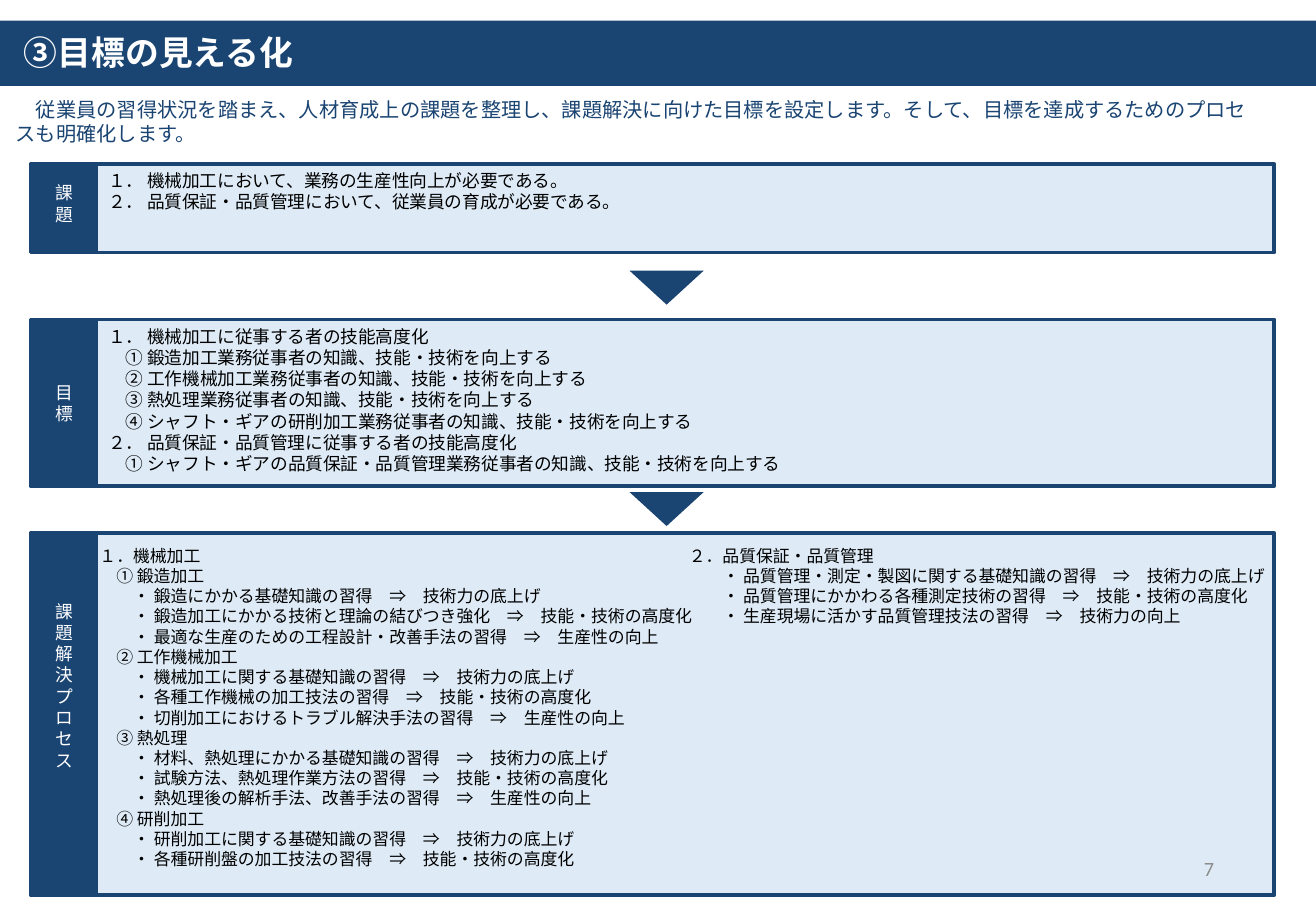
from dataclasses import dataclass

from lxml import etree
from pptx import Presentation
from pptx.dml.color import RGBColor
from pptx.enum.shapes import MSO_SHAPE
from pptx.enum.text import MSO_ANCHOR, PP_ALIGN
from pptx.oxml.ns import qn
from pptx.util import Cm, Pt

RECTANGLE, TRIANGLE = MSO_SHAPE.RECTANGLE, MSO_SHAPE.ISOSCELES_TRIANGLE
TOP, MIDDLE = MSO_ANCHOR.TOP, MSO_ANCHOR.MIDDLE
LEFT, CENTER, RIGHT = PP_ALIGN.LEFT, PP_ALIGN.CENTER, PP_ALIGN.RIGHT
NAVY = RGBColor(0x1A, 0x44, 0x72)
PALE = RGBColor(0xDE, 0xEB, 0xF7)
WHITE = RGBColor(0xFF, 0xFF, 0xFF)
BLACK = RGBColor(0x00, 0x00, 0x00)
GREY = RGBColor(0x8C, 0x8C, 0x8C)
JAPANESE, LATIN = "Noto Sans CJK JP", "Calibri"
LINE_HEIGHT = 1.2

ISSUES = [
    (0, "１． 機械加工において、業務の生産性向上が必要である。"),
    (0, "２． 品質保証・品質管理において、従業員の育成が必要である。"),
]
GOALS = [
    (0, "１． 機械加工に従事する者の技能高度化"),
    (1, "① 鍛造加工業務従事者の知識、技能・技術を向上する"),
    (1, "② 工作機械加工業務従事者の知識、技能・技術を向上する"),
    (1, "③ 熱処理業務従事者の知識、技能・技術を向上する"),
    (1, "④ シャフト・ギアの研削加工業務従事者の知識、技能・技術を向上する"),
    (0, "２． 品質保証・品質管理に従事する者の技能高度化"),
    (1, "① シャフト・ギアの品質保証・品質管理業務従事者の知識、技能・技術を向上する"),
]
MACHINING = [
    (0, "１．機械加工"),
    (1, "① 鍛造加工"),
    (2, "・ 鍛造にかかる基礎知識の習得　⇒　技術力の底上げ"),
    (2, "・ 鍛造加工にかかる技術と理論の結びつき強化　⇒　技能・技術の高度化"),
    (2, "・ 最適な生産のための工程設計・改善手法の習得　⇒　生産性の向上"),
    (1, "② 工作機械加工"),
    (2, "・ 機械加工に関する基礎知識の習得　⇒　技術力の底上げ"),
    (2, "・ 各種工作機械の加工技法の習得　⇒　技能・技術の高度化"),
    (2, "・ 切削加工におけるトラブル解決手法の習得　⇒　生産性の向上"),
    (1, "③ 熱処理"),
    (2, "・ 材料、熱処理にかかる基礎知識の習得　⇒　技術力の底上げ"),
    (2, "・ 試験方法、熱処理作業方法の習得　⇒　技能・技術の高度化"),
    (2, "・ 熱処理後の解析手法、改善手法の習得　⇒　生産性の向上"),
    (1, "④ 研削加工"),
    (2, "・ 研削加工に関する基礎知識の習得　⇒　技術力の底上げ"),
    (2, "・ 各種研削盤の加工技法の習得　⇒　技能・技術の高度化"),
]
QUALITY = [
    (0, "２．品質保証・品質管理"),
    (2, "・ 品質管理・測定・製図に関する基礎知識の習得　⇒　技術力の底上げ"),
    (2, "・ 品質管理にかかわる各種測定技術の習得　⇒　技能・技術の高度化"),
    (2, "・ 生産現場に活かす品質管理技法の習得　⇒　技術力の向上"),
]
INTRO = ("従業員の習得状況を踏まえ、人材育成上の課題を整理し、課題解決に向けた目標を設定します。"
         "そして、目標を達成するためのプロセスも明確化します。")


@dataclass
class Box:
    left: float
    top: float
    width: float
    height: float

    def lengths(self):
        return Cm(self.left), Cm(self.top), Cm(self.width), Cm(self.height)


def add_block(page, box, fill, preset=RECTANGLE, outlined=False):
    block = page.shapes.add_shape(preset, *box.lengths())
    block.shadow.inherit = False
    block.fill.solid()
    block.fill.fore_color.rgb = fill
    if outlined:
        block.line.color.rgb = NAVY
        block.line.width = Pt(2.25)
    else:
        block.line.fill.background()
    return block


def write(shape, lines, size, color, align=LEFT, anchor=TOP, font=JAPANESE, bold=False):
    frame = shape.text_frame
    frame.word_wrap = True
    frame.vertical_anchor = anchor
    for number, (depth, text) in enumerate(lines):
        para = frame.add_paragraph() if number else frame.paragraphs[0]
        para.text = text
        para.alignment = align
        para.line_spacing = Pt(size * LINE_HEIGHT)
        para.font.size = Pt(size)
        para.font.bold = bold
        para.font.name = font
        para.font.color.rgb = color
        properties = para._p.get_or_add_pPr()
        properties.set("indent", str(Pt(size * depth)))
        etree.SubElement(properties.find(qn("a:defRPr")), qn("a:ea"), typeface=font)


def add_text(page, box, lines, size, color, **style):
    text_box = page.shapes.add_textbox(*box.lengths())
    write(text_box, lines, size, color, **style)
    return text_box


def add_header(page, box):
    add_block(page, box, NAVY)
    title_box = Box(box.left + 0.25, box.top + 0.1, 12, 1.14)
    add_text(page, title_box, [(0, "③目標の見える化")], 20, WHITE, bold=True)
    intro_box = Box(box.left + 0.08, box.top + 1.47, 26.57, 1.27)
    add_text(page, intro_box, [(1, INTRO)], 12, NAVY, anchor=MIDDLE)


def add_panel(page, box, label, label_rise=0.0, lines=()):
    label_width = 1.37
    body_box = Box(box.left + label_width, box.top, box.width - label_width, box.height)
    body = add_block(page, body_box, PALE, outlined=True)
    if lines:
        write(body, lines, 10.5, BLACK)
    add_block(page, Box(box.left, box.top, label_width, box.height), NAVY, outlined=True)
    label_box = Box(box.left + 0.23, box.top - label_rise, 0.94, box.height)
    tag = add_text(page, label_box, [(0, label)], 10.5, WHITE, align=CENTER, anchor=MIDDLE)
    tag.text_frame._txBody.bodyPr.set("vert", "wordArtVertRtl")


def add_process(page, box):
    add_panel(page, box, "課題解決プロセス", label_rise=0.6)
    text_top = box.top + 0.13
    add_text(page, Box(box.left + 13.51, text_top, 12.67, 1.96), QUALITY, 10, BLACK)
    add_text(page, Box(box.left + 1.19, text_top, 13.03, 7.09), MACHINING, 10, BLACK)
    number_box = Box(box.left + 18.79, box.top + 6.5, 6.2, 1.02)
    add_text(page, number_box, [(0, "7")], 12, GREY, align=RIGHT, anchor=MIDDLE, font=LATIN)


def add_down_arrow(page, box):
    add_block(page, box, NAVY, preset=TRIANGLE).rotation = 180


def main():
    deck = Presentation()
    deck.slide_width, deck.slide_height = Cm(27.51), Cm(19.05)
    page = deck.slides.add_slide(deck.slide_layouts[6])
    add_header(page, Box(0, 0.43, 27.51, 1.37))
    add_panel(page, Box(0.64, 3.43, 26, 1.85), "課題", label_rise=0.1, lines=ISSUES)
    add_panel(page, Box(0.64, 6.68, 26, 3.48), "目標", lines=GOALS)
    add_process(page, Box(0.64, 11.15, 26, 7.57))
    for arrow_top in (5.66, 10.29):
        add_down_arrow(page, Box(13.16, arrow_top, 1.55, 0.71))
    deck.save("out.pptx")


if __name__ == "__main__":
    main()
